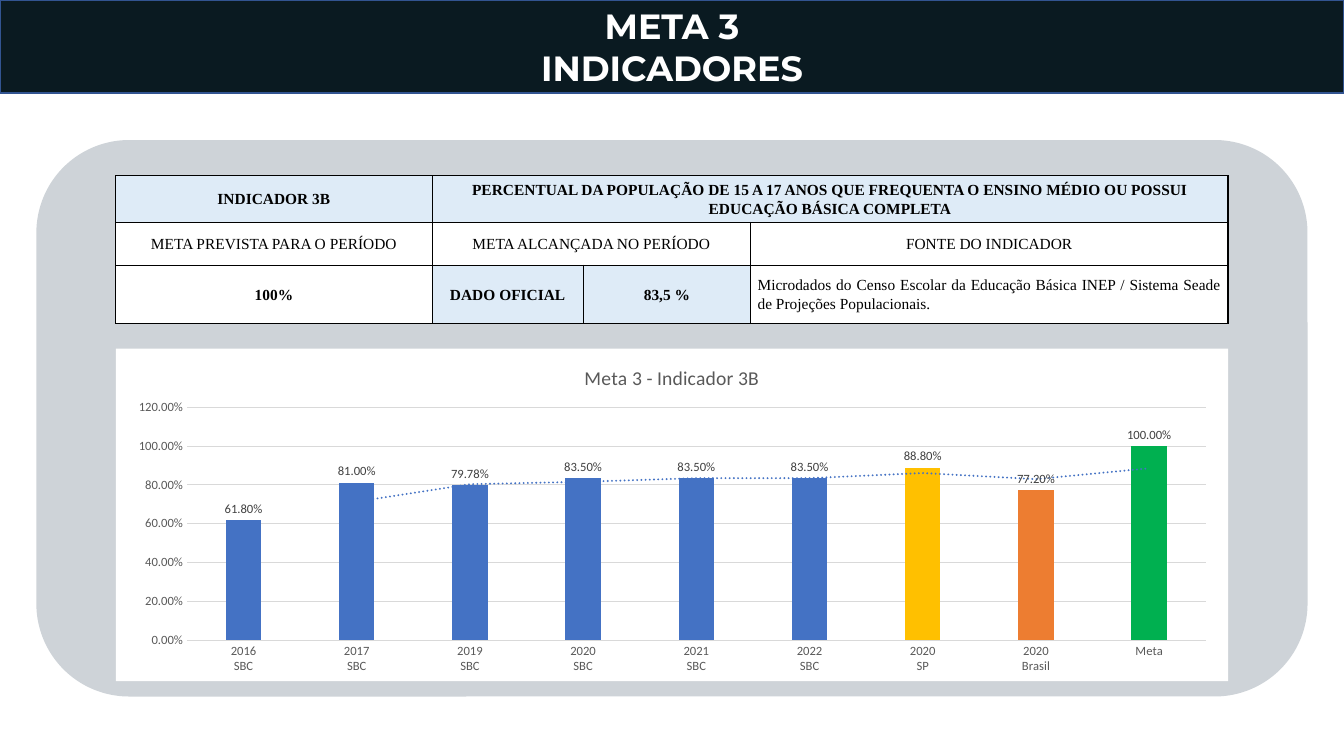
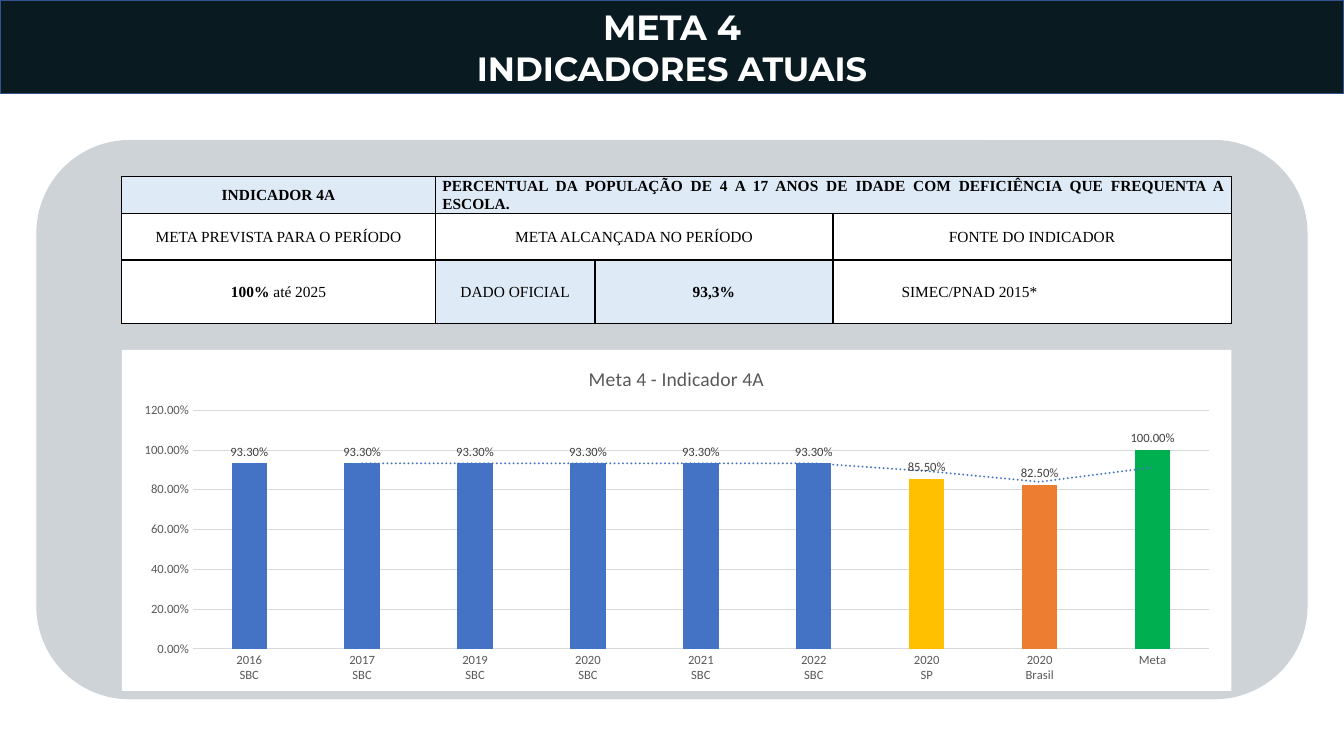
from dataclasses import dataclass

from lxml import etree
from pptx import Presentation
from pptx import util as u
from pptx.chart.data import CategoryChartData
from pptx.dml.color import RGBColor
from pptx.enum import chart as ch, shapes, text
from pptx.oxml import parse_xml
from pptx.oxml.ns import nsdecls, qn

Pt = u.Pt
CENTER, JUSTIFY = text.PP_ALIGN.CENTER, text.PP_ALIGN.JUSTIFY


@dataclass(frozen=True)
class Theme:
    # Colours
    band: str = "0A1A21"
    band_line: str = "325491"
    panel: str = "CED3D8"
    white: str = "FFFFFF"
    black: str = "000000"
    tint: str = "DEEBF7"
    grid: str = "D9D9D9"
    muted: str = "595959"
    label: str = "404040"
    bar: str = "4472C4"
    state: str = "FFC000"
    country: str = "ED7D31"
    goal: str = "00B050"
    # Fonts and sizes
    title_font: str = "Montserrat"
    table_font: str = "Times New Roman"
    chart_font: str = "Calibri"
    table_size: float = 11
    chart_title_size: float = 14
    chart_size: float = 9


@dataclass
class Cell:
    runs: list  # (text, bold) pairs
    tinted: bool = False
    align: int = CENTER
    indent: float = 0
    span: int = 1


def rgb(value):
    return RGBColor.from_string(value)


def set_font(font, name, size, color, bold=False):
    font.name, font.size, font.bold = name, Pt(size), bold
    font.color.rgb = rgb(color)


class Deck:
    """Holds the style and the slide being built."""

    def __init__(self, theme):
        self.theme = theme
        self.prs = Presentation()
        self.prs.slide_width, self.prs.slide_height = Pt(960), Pt(540)
        self.s = None

    def add_slide(self):
        self.s = self.prs.slides.add_slide(self.prs.slide_layouts[5])

    def title_band(self, height, lines):
        t, sp = self.theme, self.s.shapes.title
        sp.left, sp.top, sp.width, sp.height = 0, 0, Pt(960), Pt(height)
        sp.fill.solid()
        sp.fill.fore_color.rgb = rgb(t.band)
        sp.line.color.rgb, sp.line.width = rgb(t.band_line), Pt(1)
        tf = sp.text_frame
        tf.auto_size = text.MSO_AUTO_SIZE.NONE
        tf.vertical_anchor = text.MSO_ANCHOR.MIDDLE
        tf.text = "\n".join(line for line, _ in lines)
        for p, (_, size) in zip(tf.paragraphs, lines):
            p.alignment = CENTER
            set_font(p.font, t.title_font, size, t.white, True)

    def panel(self, height):
        sp = self.s.shapes.add_shape(shapes.MSO_SHAPE.ROUNDED_RECTANGLE,
                                     Pt(26), Pt(100), Pt(908), Pt(height))
        sp.shadow.inherit = False
        sp.fill.solid()
        sp.fill.fore_color.rgb = rgb(self.theme.panel)
        sp.line.fill.background()

    def table(self, left, top, widths, heights, rows):
        frame = self.s.shapes.add_table(len(heights), len(widths), Pt(left), Pt(top),
                                        Pt(sum(widths)), Pt(sum(heights)))
        tbl = frame.table
        tbl.first_row = tbl.horz_banding = False
        for column, width in zip(tbl.columns, widths):
            column.width = Pt(width)
        for row, height in zip(tbl.rows, heights):
            row.height = Pt(height)
        for i, cells in enumerate(rows):
            j = 0
            for item in cells:
                for k in range(j, j + item.span):
                    self.borders(tbl.cell(i, k))
                if item.span > 1:
                    tbl.cell(i, j).merge(tbl.cell(i, j + item.span - 1))
                self.fill_cell(tbl.cell(i, j), item)
                j += item.span

    def borders(self, cell):
        tc_pr = cell._tc.get_or_add_tcPr()
        for side in ("lnL", "lnR", "lnT", "lnB"):
            tc_pr.append(parse_xml(
                f'<a:{side} {nsdecls("a")} w="{Pt(1)}"><a:solidFill>'
                f'<a:srgbClr val="{self.theme.black}"/></a:solidFill></a:{side}>'))

    def fill_cell(self, cell, item):
        t = self.theme
        cell.fill.solid()
        cell.fill.fore_color.rgb = rgb(t.tint if item.tinted else t.white)
        cell.margin_left = cell.margin_right = Pt(5)
        cell.margin_top = cell.margin_bottom = 0
        cell.vertical_anchor = text.MSO_ANCHOR.MIDDLE
        p = cell.text_frame.paragraphs[0]
        p.alignment, p.line_spacing, p.space_after = item.align, 1.07, Pt(8)
        set_font(p.font, t.table_font, t.table_size, t.black)
        if item.indent:
            p._p.get_or_add_pPr().set("marL", str(Pt(item.indent)))
        for words, bold in item.runs:
            r = p.add_run()
            r.text, r.font.bold = words, bold

    def column_chart(self, left, top, width, height, title, categories, values, highlights):
        t = self.theme
        data = CategoryChartData(number_format="0.00%")
        data.categories = categories
        data.add_series("Series 1", values)
        chart = self.s.shapes.add_chart(ch.XL_CHART_TYPE.COLUMN_CLUSTERED, Pt(left), Pt(top),
                                        Pt(width), Pt(height), data).chart
        set_font(chart.font, t.chart_font, t.chart_size, t.muted)
        chart.has_legend = False
        p = chart.chart_title.text_frame.paragraphs[0]
        p.text = title
        set_font(p.font, t.chart_font, t.chart_title_size, t.muted)

        # Axes
        for axis in (chart.category_axis, chart.value_axis):
            axis.major_tick_mark = axis.minor_tick_mark = ch.XL_TICK_MARK.NONE
            set_font(axis.tick_labels.font, t.chart_font, t.chart_size, t.muted)
        value_axis = chart.value_axis
        value_axis.minimum_scale, value_axis.maximum_scale = 0, 1.2
        value_axis.major_unit = 0.2
        value_axis.tick_labels.number_format = "0.00%"
        value_axis.tick_labels.number_format_is_linked = False
        value_axis.format.line.fill.background()
        for part in (chart.category_axis, value_axis.major_gridlines):
            part.format.line.color.rgb = rgb(t.grid)
            part.format.line.width = Pt(0.75)

        # Bars and labels
        plot = chart.plots[0]
        plot.gap_width, plot.overlap, plot.vary_by_categories = 219, -27, False
        series = plot.series[0]
        series.format.fill.solid()
        series.format.fill.fore_color.rgb = rgb(t.bar)
        for index, color in highlights.items():
            fill = series.points[index].format.fill
            fill.solid()
            fill.fore_color.rgb = rgb(color)
        labels = series.data_labels
        labels.show_value = True
        labels.position = ch.XL_LABEL_POSITION.OUTSIDE_END
        labels.number_format, labels.number_format_is_linked = "0.00%", False
        set_font(labels.font, t.chart_font, t.chart_size, t.label)
        self.moving_average(series)
        self.chart_area(chart)

    def moving_average(self, series):
        series._element.find(qn("c:cat")).addprevious(parse_xml(
            f'<c:trendline {nsdecls("c", "a")}><c:spPr><a:ln w="{Pt(1.5)}" cap="rnd">'
            f'<a:solidFill><a:srgbClr val="{self.theme.bar}"/></a:solidFill>'
            '<a:prstDash val="sysDot"/></a:ln></c:spPr><c:trendlineType val="movingAvg"/>'
            '<c:period val="2"/><c:dispRSqr val="0"/><c:dispEq val="0"/></c:trendline>'))

    def chart_area(self, chart):
        space = chart._chartSpace
        space.find(qn("c:chart")).addnext(parse_xml(
            f'<c:spPr {nsdecls("c", "a")}><a:solidFill><a:srgbClr val="{self.theme.white}"/>'
            '</a:solidFill><a:ln><a:noFill/></a:ln></c:spPr>'))
        area = space.find(".//" + qn("c:plotArea"))
        old = area.find(qn("c:layout"))
        if old is not None:
            area.remove(old)
        layout = etree.Element(qn("c:layout"))
        manual = etree.SubElement(layout, qn("c:manualLayout"))
        for tag, value in (("layoutTarget", "inner"), ("xMode", "edge"), ("yMode", "edge"),
                           ("x", "0.064"), ("y", "0.177"), ("w", "0.916"), ("h", "0.7")):
            etree.SubElement(manual, qn("c:" + tag)).set("val", value)
        area.insert(0, layout)


def indicator_rows(name, description, goal, official, result, source):
    """The three table rows that every indicator has."""
    return [
        [Cell([(name, True)], tinted=True), description],
        [Cell([("META PREVISTA PARA O PERÍODO", False)]),
         Cell([("META ALCANÇADA NO PERÍODO", False)], span=2),
         Cell([("FONTE DO INDICADOR", False)])],
        [Cell(goal), Cell([("DADO OFICIAL", official)], tinted=True),
         Cell([(result, True)], tinted=True), source],
    ]


CATEGORIES = [f"{year}\nSBC" for year in (2016, 2017, 2019, 2020, 2021, 2022)]
CATEGORIES += ["2020\nSP", "2020\nBrasil", "Meta"]


def main():
    theme = Theme()
    deck = Deck(theme)
    highlights = {6: theme.state, 7: theme.country, 8: theme.goal}

    # Meta 3
    deck.add_slide()
    deck.title_band(66.5, [("META 3", 25), ("INDICADORES", 25)])
    deck.panel(397.5)
    deck.table(82.7, 125.5, [226, 108, 119.5, 341], [33.5, 30.5, 41.5], indicator_rows(
        "INDICADOR 3B",
        Cell([("PERCENTUAL DA POPULAÇÃO DE 15 A 17 ANOS QUE FREQUENTA O ENSINO MÉDIO "
               "OU POSSUI EDUCAÇÃO BÁSICA COMPLETA", True)], tinted=True, span=3),
        [("100%", True)], True, "83,5 %",
        Cell([("Microdados do Censo Escolar da Educação Básica INEP / Sistema Seade "
               "de Projeções Populacionais.", False)], align=JUSTIFY)))
    deck.column_chart(82.7, 249, 794.5, 237.5, "Meta 3 - Indicador 3B", CATEGORIES,
                      [0.618, 0.81, 0.7978, 0.835, 0.835, 0.835, 0.888, 0.772, 1], highlights)

    # Meta 4
    deck.add_slide()
    deck.title_band(67, [("META 4", 25), ("INDICADORES ATUAIS", 24)])
    deck.panel(399.5)
    deck.table(87, 126, [224, 114, 170, 284.5], [25.5, 33.5, 45.5], indicator_rows(
        "INDICADOR 4A",
        Cell([("PERCENTUAL DA POPULAÇÃO DE 4 A 17 ANOS DE IDADE COM DEFICIÊNCIA "
               "QUE FREQUENTA A ESCOLA.", True)], tinted=True, align=JUSTIFY, span=3),
        [("100%", True), (" até 2025", False)], False, "93,3%",
        Cell([("SIMEC/PNAD 2015*", False)], align=JUSTIFY, indent=44)))
    deck.column_chart(87, 250, 792.5, 243.5, "Meta 4 - Indicador 4A", CATEGORIES,
                      [0.933] * 6 + [0.855, 0.825, 1], highlights)

    deck.prs.save("out.pptx")


if __name__ == "__main__":
    main()
